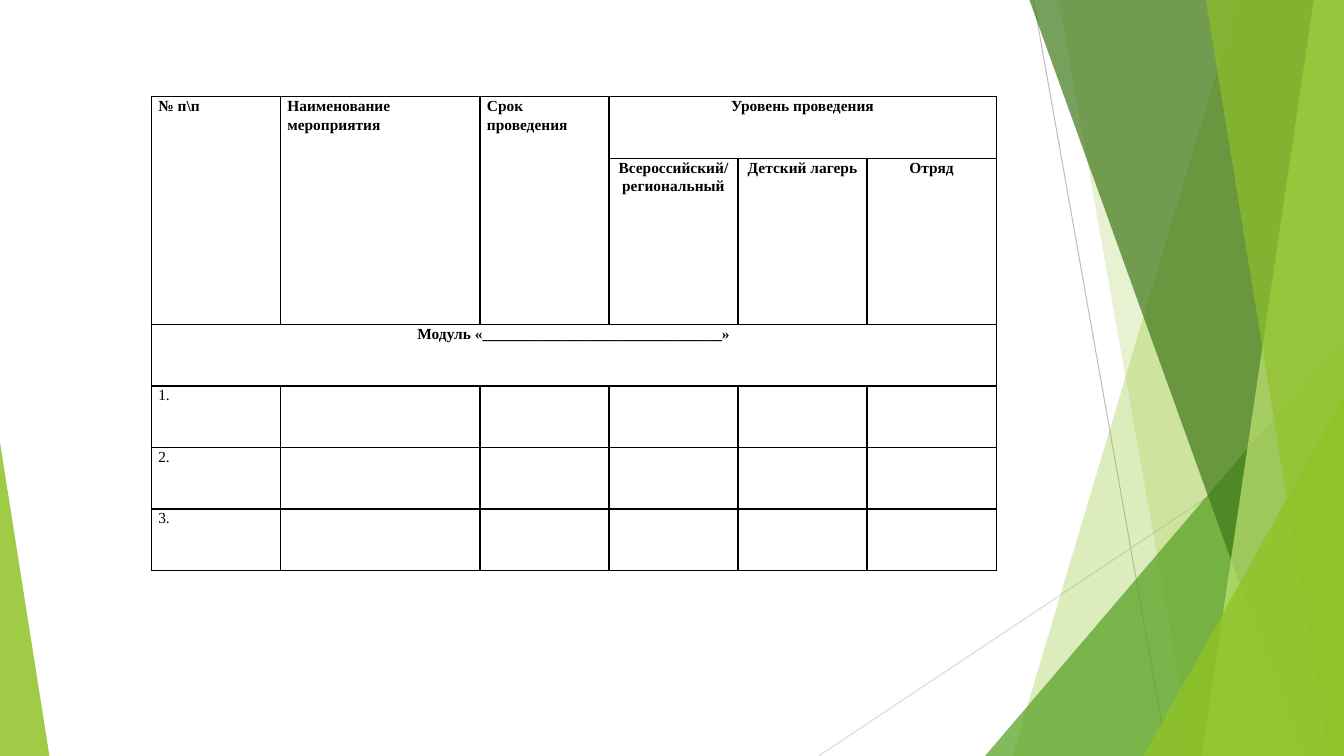
import lxml.etree
import pptx
import pptx.dml.color
import pptx.enum.shapes
import pptx.enum.text
import pptx.oxml
import pptx.oxml.ns
import pptx.util

Inches = pptx.util.Inches
LEFT = pptx.enum.text.PP_ALIGN.LEFT
CENTER = pptx.enum.text.PP_ALIGN.CENTER
WIDTH, HEIGHT = 13.33, 7.5
COLUMNS = [1.28, 1.98, 1.28, 1.28, 1.28, 1.28]
ROWS = [0.61, 1.65, 0.61, 0.61, 0.61, 0.61]
MERGES = [((0, 0), (1, 0)), ((0, 1), (1, 1)), ((0, 2), (1, 2)),
          ((0, 3), (0, 5)), ((2, 0), (2, 5))]
HEADINGS = [
    (0, 0, LEFT, ["№ п\\п"]),
    (0, 1, LEFT, ["Наименование мероприятия"]),
    (0, 2, LEFT, ["Срок проведения"]),
    (0, 3, CENTER, ["Уровень проведения"]),
    (1, 3, CENTER, ["Всероссийский/", "региональный"]),
    (1, 4, CENTER, ["Детский лагерь"]),
    (1, 5, CENTER, ["Отряд"]),
    (2, 0, CENTER, ["Модуль «" + "_" * 31 + "»"]),
]


def color(value):
    """Turn a hex string into a colour."""
    return pptx.dml.color.RGBColor.from_string(value)


def add_child(parent, tag, **attributes):
    """Append a DrawingML element to a parent."""
    return lxml.etree.SubElement(parent, pptx.oxml.ns.qn(tag), attributes)


def paint(shape, fill, opacity):
    """Give a shape a translucent fill without line or shadow."""
    shape.shadow.inherit = False
    shape.fill.solid()
    shape.fill.fore_color.rgb = color(fill)
    shape.line.fill.background()
    solid = shape.fill._xPr.find(pptx.oxml.ns.qn("a:solidFill"))
    add_child(solid[0], "a:alpha", val=str(opacity * 1000))


def add_band(page, top_left, bottom_left, fill, opacity):
    """Draw a full-height band with a slanted left edge."""
    builder = page.shapes.build_freeform(Inches(top_left), 0)
    corners = [(WIDTH, 0), (WIDTH, HEIGHT), (bottom_left, HEIGHT)]
    builder.add_line_segments([(Inches(x), Inches(y)) for x, y in corners])
    paint(builder.convert_to_shape(), fill, opacity)


def add_triangle(page, left, top, width, apex, fill, opacity):
    """Draw a triangle that stands on the bottom of the page."""
    triangle = page.shapes.add_shape(
        pptx.enum.shapes.MSO_SHAPE.ISOSCELES_TRIANGLE,
        Inches(left), Inches(top), Inches(width), Inches(HEIGHT - top))
    triangle.adjustments[0] = apex
    paint(triangle, fill, opacity)


def add_thin_line(page, start, end, stroke):
    """Draw a thin straight line."""
    line = page.shapes.add_connector(
        pptx.enum.shapes.MSO_CONNECTOR.STRAIGHT,
        *[Inches(length) for length in start + end])
    line.line.color.rgb = color(stroke)
    line.line.width = pptx.util.Pt(0.75)
    add_child(line._element.spPr, "a:effectLst")


def add_decoration(page):
    """Draw the green facets and the lines behind them."""
    add_thin_line(page, (10.25, 0), (11.58, HEIGHT), "BFBFBF")
    add_thin_line(page, (WIDTH, 4.03), (8.12, HEIGHT), "D9D9D9")
    add_band(page, 12.28, 10.04, "90C226", 30)
    add_band(page, 10.5, 11.83, "90C226", 20)
    add_triangle(page, 9.77, 3.33, 3.56, 1, "54A021", 72)
    add_band(page, 10.21, 12.91, "3F7819", 70)
    add_band(page, 13.03, 11.92, "C0E474", 70)
    add_band(page, 11.96, 13.18, "90C226", 65)
    add_triangle(page, 11.34, 3.93, 1.99, 1, "90C226", 80)
    add_triangle(page, 0, 4.39, 0.49, 0, "90C226", 85)


def format_cell(cell):
    """Clear the fill, set the margins and draw black borders."""
    cell.fill.background()
    cell.margin_left = cell.margin_right = Inches(0.07)
    cell.margin_top = cell.margin_bottom = 0
    properties = cell._tc.get_or_add_tcPr()
    for index, side in enumerate("LRTB"):
        border = pptx.oxml.ns.qn("a:ln" + side)
        border = lxml.etree.Element(border, w=str(pptx.util.Pt(1)))
        solid = add_child(border, "a:solidFill")
        add_child(solid, "a:srgbClr", val="000000")
        properties.insert(index, border)


def write_cell(cell, lines, align=LEFT, bold=False):
    """Write one paragraph per line into a cell."""
    frame = cell.text_frame
    for index, line in enumerate(lines):
        para = frame.add_paragraph() if index else frame.paragraphs[0]
        para.alignment = align
        para.line_spacing = 1.07
        span = para.add_run()
        span.text = line
        span.font.name = "Times New Roman"
        span.font.size = pptx.util.Pt(11)
        span.font.bold = bold
        span.font.color.rgb = color("000000")


def add_plan_table(page):
    """Build the table of events by module and level."""
    table = page.shapes.add_table(
        len(ROWS), len(COLUMNS), Inches(1.5), Inches(0.96),
        Inches(sum(COLUMNS)), Inches(sum(ROWS))).table
    table.first_row = table.horz_banding = False
    for column, width in zip(table.columns, COLUMNS):
        column.width = Inches(width)
    for row, height in zip(table.rows, ROWS):
        row.height = Inches(height)
    for cell in table.iter_cells():
        format_cell(cell)
    for first, last in MERGES:
        table.cell(*first).merge(table.cell(*last))
    for row, column, align, lines in HEADINGS:
        write_cell(table.cell(row, column), lines, align, bold=True)
    for number in range(1, 4):
        write_cell(table.cell(number + 2, 0), [f"{number}."])


def main():
    """Build and save the deck."""
    deck = pptx.Presentation()
    deck.slide_width = Inches(WIDTH)
    deck.slide_height = Inches(HEIGHT)
    page = deck.slides.add_slide(deck.slide_layouts[6])
    add_decoration(page)
    add_plan_table(page)
    deck.save("out.pptx")


if __name__ == "__main__":
    main()
